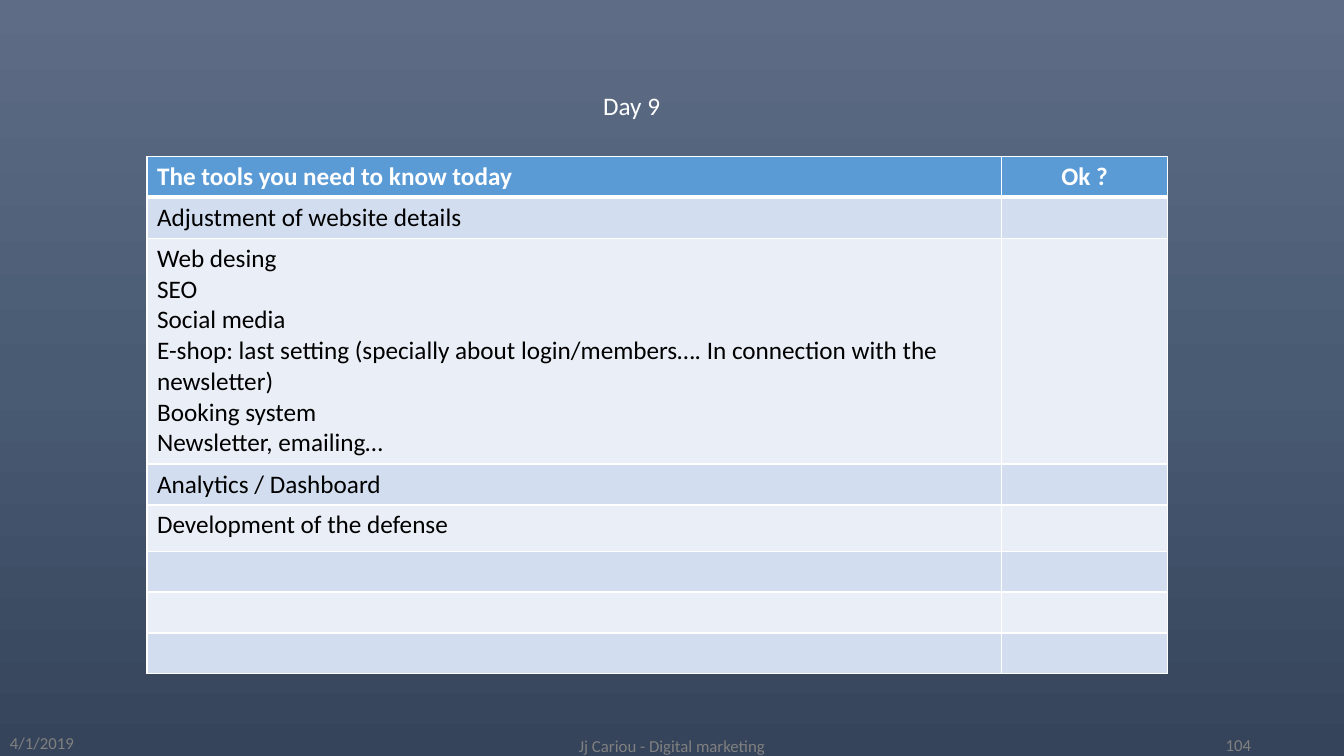
"""Build the Day 9 checklist slide: a title, a two-column tools table and a footer."""
from copy import deepcopy

from lxml.etree import SubElement
from pptx import Presentation
from pptx.dml.color import RGBColor
from pptx.enum.text import MSO_ANCHOR as ANCHOR, PP_ALIGN as ALIGN
from pptx.oxml.ns import qn
from pptx.util import Pt

PX = 9525
WHITE = RGBColor(0xFF, 0xFF, 0xFF)
BLACK = RGBColor(0x00, 0x00, 0x00)
GRAY = RGBColor(0x80, 0x80, 0x80)
HEADER_BLUE = RGBColor(0x5B, 0x9B, 0xD5)
BANDS = [RGBColor(0xEA, 0xEF, 0xF7), RGBColor(0xD2, 0xDE, 0xEF)]
BACKGROUND = [
    (0, RGBColor(0x5E, 0x6D, 0x85)),
    (0.5, RGBColor(0x49, 0x5A, 0x73)),
    (1, RGBColor(0x35, 0x44, 0x5A)),
]


def write(tf, text, align, **font):
    tf.text = text
    for p in tf.paragraphs:
        p.alignment = align
        for r in p.runs:
            r.font.name = "Calibri"
            r.font.color.rgb = font["color"]
            r.font.size = Pt(font["size"])
            r.font.bold = font.get("bold", False)


def add_border(cell, side, width):
    ln = SubElement(cell._tc.get_or_add_tcPr(), qn(f"a:ln{side}"), w=str(Pt(width)))
    SubElement(SubElement(ln, qn("a:solidFill")), qn("a:srgbClr"), val=str(WHITE))


prs = Presentation()
prs.slide_width, prs.slide_height = 1280 * PX, 720 * PX
s = prs.slides.add_slide(prs.slide_layouts[6])

fill = s.background.fill
fill.gradient()
fill.gradient_angle = 270
stops = s._element.find(".//" + qn("a:gsLst"))
stops.insert(1, deepcopy(stops[0]))
for stop, (position, color) in zip(fill.gradient_stops, BACKGROUND):
    stop.position = position
    stop.color.rgb = color

TEXTS = [
    ("4/1/2019", (0, 697, 123, 21), ALIGN.LEFT, 12, GRAY, ANCHOR.MIDDLE, True),
    ("Jj Cariou - Digital marketing", (424, 697, 432, 27), ALIGN.CENTER, 12, GRAY, ANCHOR.MIDDLE, True),
    ("104", (1015, 698, 186, 23), ALIGN.RIGHT, 12, GRAY, ANCHOR.MIDDLE, True),
    ("Day 9", (565, 81, 74, 38), ALIGN.LEFT, 18, WHITE, ANCHOR.TOP, False),
]
for text, box, align, size, color, anchor, wrap in TEXTS:
    tf = s.shapes.add_textbox(*(v * PX for v in box)).text_frame
    tf.word_wrap = wrap
    tf.vertical_anchor = anchor
    write(tf, text, align, size=size, color=color)

TOOLS = [
    "Web desing",
    "SEO",
    "Social media",
    "E-shop: last setting (specially about login/members…. In connection with the newsletter)",
    "Booking system",
    "Newsletter, emailing…",
]
ROWS = [
    (39, "The tools you need to know today", "Ok ?"),
    (39, "Adjustment of website details", ""),
    (215, "\n".join(TOOLS), ""),
    (39, "Analytics / Dashboard", ""),
    (44, "Development of the defense", ""),
    (39, "", ""),
    (39, "", ""),
    (39, "", ""),
]
COLUMNS = [814, 158]
height = sum(row[0] for row in ROWS)
table = s.shapes.add_table(
    len(ROWS), len(COLUMNS), 140 * PX, 149 * PX, sum(COLUMNS) * PX, height * PX
).table
for column, width in zip(table.columns, COLUMNS):
    column.width = width * PX
for i, (row_height, *texts) in enumerate(ROWS):
    table.rows[i].height = row_height * PX
    header = i == 0
    for j, text in enumerate(texts):
        cell = table.cell(i, j)
        for side in "LRTB":
            heavy = (side == "B" and i == 0) or (side == "T" and i == 1)
            add_border(cell, side, 3 if heavy else 1)
        cell.fill.solid()
        cell.fill.fore_color.rgb = HEADER_BLUE if header else BANDS[i % 2]
        write(cell.text_frame, text, ALIGN.CENTER if j else ALIGN.LEFT,
              size=18, color=WHITE if header else BLACK, bold=header)

prs.save("out.pptx")
